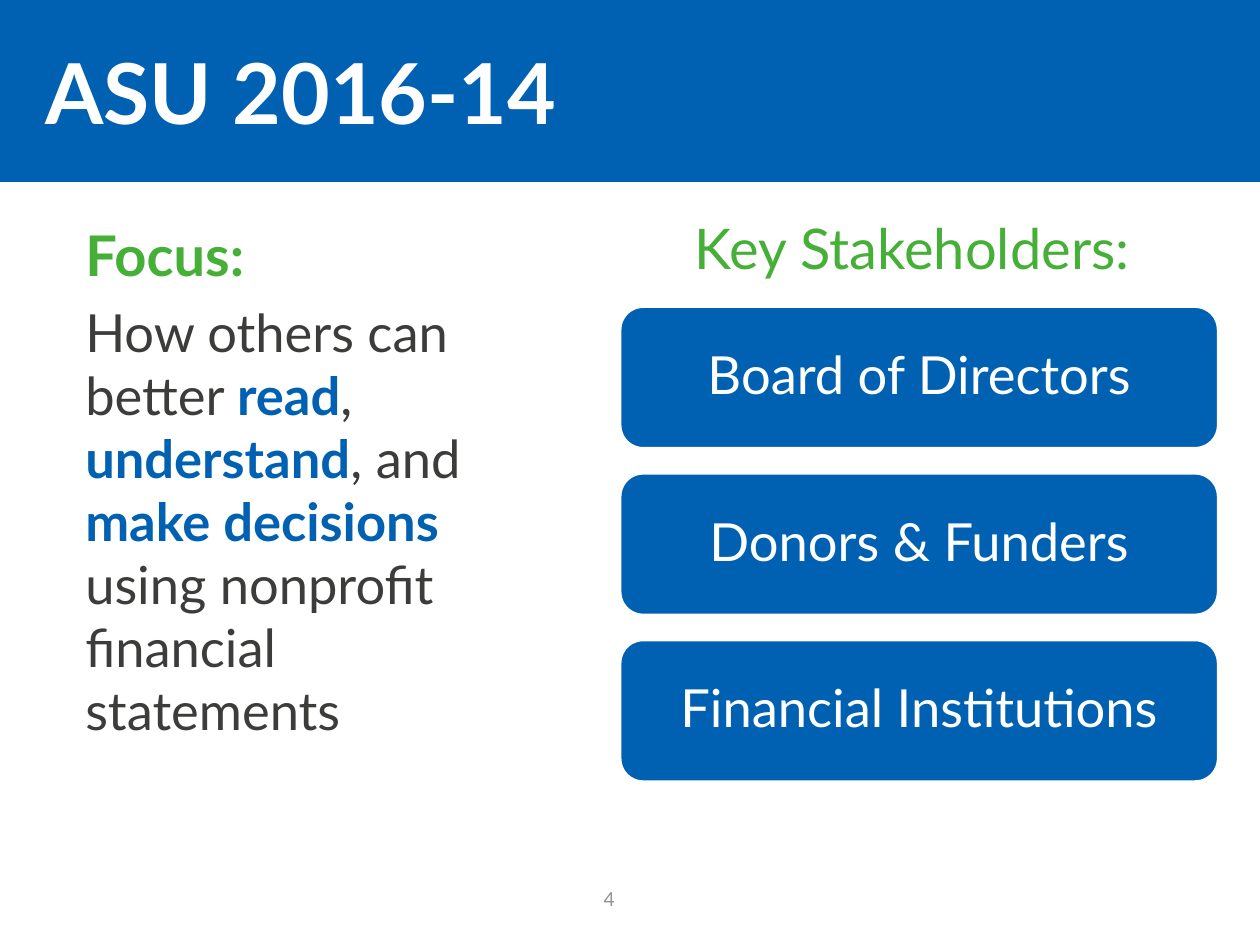
import pptx
import pptx.util
import pptx.dml.color
import pptx.enum.shapes
import pptx.enum.text
from pptx.util import Cm, Pt

BLUE, GREEN, DARK, GRAY, WHITE = "0061B2", "46AF37", "3C3C3B", "929292", "FFFFFF"
ALIGN = pptx.enum.text.PP_ALIGN
ANCHOR = pptx.enum.text.MSO_ANCHOR
SHAPE = pptx.enum.shapes.MSO_SHAPE

title = "ASU 2016-14"
focus_heading = "Focus:"
focus = [
    ("How others can better ", False),
    ("read", True),
    (", ", False),
    ("understand", True),
    (", and ", False),
    ("make decisions ", True),
    ("using nonprofit financial statements", False),
]
stakeholders_heading = "Key Stakeholders:"
stakeholders = ["Board of Directors", "Donors & Funders", "Financial Institutions"]
page_number = "4"

card_left, card_top, card_width, card_height, card_pitch = 12.47, 6.15, 12.12, 2.92, 3.36


def color(value):
    return pptx.dml.color.RGBColor.from_string(value)


def write(holder, runs, size, shade, bold=False, align=ALIGN.LEFT, anchor=ANCHOR.MIDDLE):
    frame = holder.text_frame
    frame.word_wrap = True
    frame.vertical_anchor = anchor
    paragraph = frame.paragraphs[0]
    paragraph.alignment = align
    paragraph.font.name = "Lato"
    paragraph.font.size = Pt(size)
    paragraph.font.bold = bold
    paragraph.font.color.rgb = color(shade)
    for text, emphasized in runs:
        run = paragraph.add_run()
        run.text = text
        if emphasized:
            run.font.bold = True
            run.font.color.rgb = color(BLUE)
    return frame


def add_text(slide, left, top, width, height, runs, size, shade, **style):
    box = slide.shapes.add_textbox(Cm(left), Cm(top), Cm(width), Cm(height))
    return write(box, runs, size, shade, **style)


def add_panel(slide, kind, left, top, width, height, outline, weight):
    panel = slide.shapes.add_shape(kind, Cm(left), Cm(top), Cm(width), Cm(height))
    panel.shadow.inherit = False
    panel.fill.solid()
    panel.fill.fore_color.rgb = color(BLUE)
    panel.line.color.rgb = color(outline)
    panel.line.width = Pt(weight)
    return panel


def main():
    deck = pptx.Presentation()
    deck.slide_width, deck.slide_height = Cm(25.4), Cm(19.05)
    slide = deck.slides.add_slide(deck.slide_layouts[6])

    banner = add_panel(slide, SHAPE.RECTANGLE, 0, 0, 25.4, 3.66, BLUE, 0.75)
    write(banner, [(title, False)], 48, WHITE, bold=True).margin_left = Cm(0.92)

    add_text(slide, 1.47, 4.14, 9.53, 1.78, [(focus_heading, False)], 32, GREEN,
             bold=True, anchor=ANCHOR.BOTTOM)
    add_text(slide, 1.47, 5.92, 9.53, 10.36, focus, 30, DARK, anchor=ANCHOR.TOP)

    add_text(slide, card_left, 4.01, 11.84, 1.78, [(stakeholders_heading, False)], 32, GREEN,
             align=ALIGN.CENTER, anchor=ANCHOR.BOTTOM)
    for index, stakeholder in enumerate(stakeholders):
        card = add_panel(slide, SHAPE.ROUNDED_RECTANGLE, card_left, card_top + index * card_pitch,
                         card_width, card_height, WHITE, 3.35)
        card.adjustments[0] = 0.17
        frame = write(card, [(stakeholder, False)], 30, WHITE, align=ALIGN.CENTER)
        frame.paragraphs[0].line_spacing = 0.9

    add_text(slide, 9.32, 17.6, 5.92, 1.02, [(page_number, False)], 11, GRAY, align=ALIGN.CENTER)
    deck.save("out.pptx")


if __name__ == "__main__":
    main()
